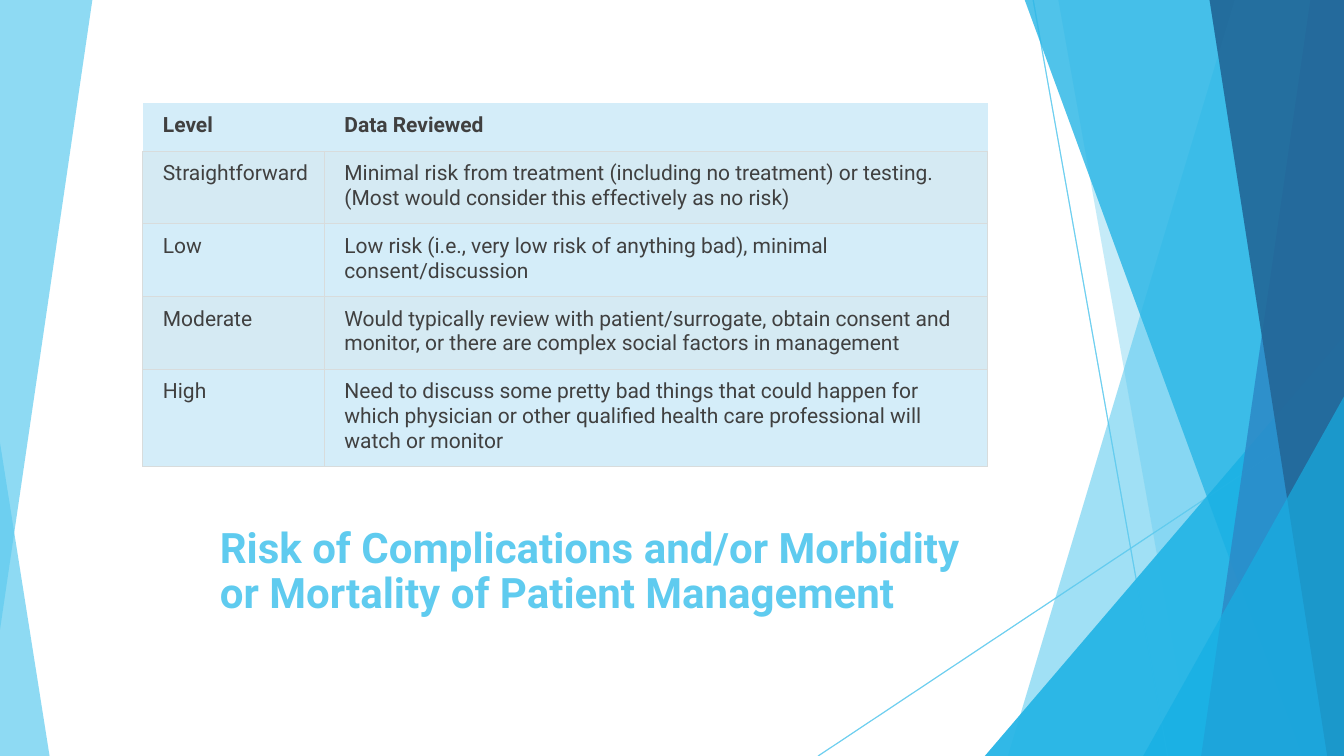
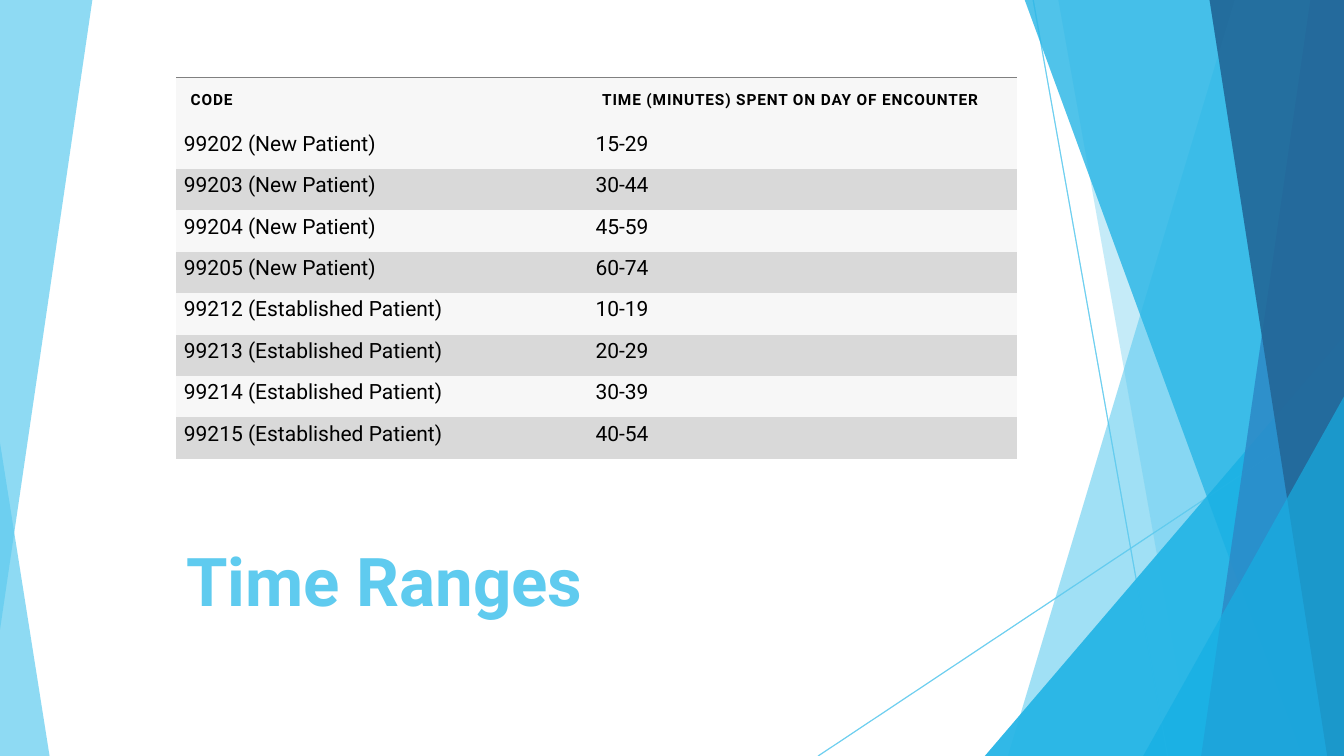
from dataclasses import dataclass

from pptx import Presentation
from pptx.dml.color import RGBColor
from pptx.enum.shapes import MSO_CONNECTOR as Connector, MSO_SHAPE as Preset
from pptx.enum.text import MSO_ANCHOR as Anchor
from pptx.oxml.ns import qn
from pptx.oxml.xmlchemy import OxmlElement
from pptx.util import Emu, Pt

COLUMNS, ROWS = 160, 90
UNIT = 76200
FONT = "Roboto"
SKY, CYAN, BLUE, NAVY = "5FCBEF", "17B0E4", "2E83C3", "226292"
INK, BLACK, RULE, GREY = "404040", "000000", "D8DCDC", "808080"
PALE, PALE_BAND, LIGHT, LIGHT_BAND = "D4EDF9", "D5EAF3", "F7F7F7", "D9D9D9"
SIDES = ("L", "R", "T", "B")


@dataclass(frozen=True)
class Ray:
    start: tuple[float, float]
    end: tuple[float, float]


@dataclass(frozen=True)
class Band:
    points: tuple[tuple[float, float], ...]
    color: str
    opacity: int


@dataclass(frozen=True)
class Wedge:
    left: float
    top: float
    width: float
    color: str
    opacity: int
    apex: int


@dataclass(frozen=True)
class Title:
    text: str
    left: float
    top: float
    size: int
    spacing: float


@dataclass(frozen=True)
class RowStyle:
    size: int
    color: str
    bold: bool
    insets: tuple[float, float, float, float]
    fills: tuple[str, ...]
    borders: str
    rule: str
    rule_width: float
    tracking: int = 0


@dataclass(frozen=True)
class Grid:
    left: float
    top: float
    widths: tuple[float, ...]
    heights: tuple[float, ...]
    header: RowStyle
    body: RowStyle
    rows: tuple[tuple[str, ...], ...]


def right_band(top: float, bottom: float, color: str, opacity: int) -> Band:
    corners = ((top, 0), (COLUMNS, 0), (COLUMNS, ROWS), (bottom, ROWS))
    return Band(corners, color, opacity)


RIGHT_ART = (
    Ray((123, 0), (139, ROWS)),
    Ray((COLUMNS, 48.4), (97.4, ROWS)),
    right_band(147.4, 120.5, SKY, 36),
    right_band(126, 142, SKY, 20),
    Wedge(117.25, 40, 42.75, CYAN, 66, 1),
    right_band(122.5, 154.9, CYAN, 50),
    right_band(156.4, 143, BLUE, 70),
    right_band(143.5, 158.1, NAVY, 80),
    Wedge(136.1, 47.2, 23.9, CYAN, 66, 1),
)
LEFT_ART = (
    Wedge(0, 52.7, 5.9, SKY, 70, 0),
    Band(((0, 0), (11.3, 0), (0, 74.6)), SKY, 70),
)
ARTWORK = RIGHT_ART + LEFT_ART + RIGHT_ART

RISK_INSETS = (2.4, 1.2, 1.2, 1.2)
RISK_TITLE = Title(
    "Risk of Complications and/or Morbidity\vor Mortality of Patient Management",
    25, 59.8, 30, 0.9)
RISK_GRID = Grid(
    17, 12.25, (21.6, 79), (5.75, 8.65, 8.65, 8.65, 11.6),
    RowStyle(15, INK, True, RISK_INSETS, (PALE,), "B", RULE, 0.75),
    RowStyle(15, INK, False, RISK_INSETS, (PALE_BAND, PALE), "LRTB", RULE, 0.75),
    (
        ("Level", "Data Reviewed"),
        ("Straightforward",
         "Minimal risk from treatment (including no treatment) or testing. "
         "(Most would consider this effectively as no risk)"),
        ("Low",
         "Low risk (i.e., very low risk of anything bad), minimal "
         "consent/discussion"),
        ("Moderate",
         "Would typically review with patient/surrogate, obtain consent and "
         "monitor, or there are complex social factors in management"),
        ("High",
         "Need to discuss some pretty bad things that could happen for which "
         "physician or other qualified health care professional will watch "
         "or monitor"),
    ))

TIME_TITLE = Title("Time Ranges", 21, 60, 48, 1.0)
TIME_GRID = Grid(
    21, 9.2, (49, 51.1), (6,) + (4.93,) * 8,
    RowStyle(11, BLACK, True, (1.7,) * 4, (LIGHT,), "T", GREY, 1, 60),
    RowStyle(15, BLACK, False, (0.9, 0.5, 0.9, 1.1), (LIGHT, LIGHT_BAND), "", GREY, 1),
    (
        ("CODE", "TIME (MINUTES) SPENT ON DAY OF ENCOUNTER"),
        ("99202 (New Patient)", "15-29"),
        ("99203 (New Patient)", "30-44"),
        ("99204 (New Patient)", "45-59"),
        ("99205 (New Patient)", "60-74"),
        ("99212 (Established Patient)", "10-19"),
        ("99213 (Established Patient)", "20-29"),
        ("99214 (Established Patient)", "30-39"),
        ("99215 (Established Patient)", "40-54"),
    ))


def units(count: float) -> Emu:
    return Emu(round(count * UNIT))


def rgb(color: str) -> RGBColor:
    return RGBColor.from_string(color)


def set_opacity(shape, percent: int) -> None:
    alpha = OxmlElement("a:alpha")
    alpha.set("val", str(percent * 1000))
    shape._element.spPr.find(".//" + qn("a:srgbClr")).append(alpha)


def paint(shape, color: str, opacity: int) -> None:
    shape.shadow.inherit = False
    shape.line.fill.background()
    shape.fill.solid()
    shape.fill.fore_color.rgb = rgb(color)
    set_opacity(shape, opacity)


def draw_ray(page, ray: Ray) -> None:
    ends = [units(value) for value in ray.start + ray.end]
    line = page.shapes.add_connector(Connector.STRAIGHT, *ends)
    line.line.color.rgb = rgb(SKY)
    line.line.width = Pt(0.75)
    set_opacity(line, 70)
    line._element.spPr.append(OxmlElement("a:effectLst"))


def draw_band(page, band: Band) -> None:
    first, *others = band.points
    outline = page.shapes.build_freeform(*first, scale=UNIT)
    outline.add_line_segments(others, close=True)
    paint(outline.convert_to_shape(), band.color, band.opacity)


def draw_wedge(page, wedge: Wedge) -> None:
    shape = page.shapes.add_shape(
        Preset.ISOSCELES_TRIANGLE, units(wedge.left), units(wedge.top),
        units(wedge.width), units(ROWS - wedge.top))
    shape.adjustments[0] = wedge.apex
    paint(shape, wedge.color, wedge.opacity)


DRAWERS = {Ray: draw_ray, Band: draw_band, Wedge: draw_wedge}


def format_spans(para, size: int, color: str, bold: bool, tracking: int = 0) -> None:
    for span in para.runs:
        span.font.name = FONT
        span.font.size = Pt(size)
        span.font.bold = bold
        span.font.color.rgb = rgb(color)
        if tracking:
            span._r.get_or_add_rPr().set("spc", str(tracking))


def draw_title(page, title: Title) -> None:
    box = page.shapes.add_textbox(
        units(title.left), units(title.top), units(121.7 - title.left), units(14.35))
    frame = box.text_frame
    frame.word_wrap = True
    frame.vertical_anchor = Anchor.BOTTOM
    para = frame.paragraphs[0]
    para.text = title.text
    para.line_spacing = title.spacing
    format_spans(para, title.size, SKY, True)


def set_borders(cell, style: RowStyle) -> None:
    properties = cell._tc.get_or_add_tcPr()
    for side in SIDES:
        edge = OxmlElement(f"a:ln{side}")
        edge.set("w", str(Pt(style.rule_width)))
        if side in style.borders:
            fill = OxmlElement("a:solidFill")
            tone = OxmlElement("a:srgbClr")
            tone.set("val", style.rule)
            fill.append(tone)
        else:
            fill = OxmlElement("a:noFill")
        edge.append(fill)
        properties.append(edge)


def fill_cell(cell, text: str, style: RowStyle, fill: str) -> None:
    set_borders(cell, style)
    cell.fill.solid()
    cell.fill.fore_color.rgb = rgb(fill)
    (cell.margin_left, cell.margin_top,
     cell.margin_right, cell.margin_bottom) = map(units, style.insets)
    cell.text_frame.text = text
    format_spans(cell.text_frame.paragraphs[0], style.size, style.color,
                 style.bold, style.tracking)


def draw_grid(page, grid: Grid) -> None:
    table = page.shapes.add_table(
        len(grid.heights), len(grid.widths), units(grid.left), units(grid.top),
        units(sum(grid.widths)), units(sum(grid.heights))).table
    table.horz_banding = False
    for column, width in zip(table.columns, grid.widths):
        column.width = units(width)
    for index, (row, height, texts) in enumerate(
            zip(table.rows, grid.heights, grid.rows)):
        row.height = units(height)
        style = grid.body if index else grid.header
        fill = style.fills[(index - 1) % len(style.fills)]
        for cell, text in zip(row.cells, texts):
            fill_cell(cell, text, style, fill)


def add_page(deck, title: Title, grid: Grid) -> None:
    page = deck.slides.add_slide(deck.slide_layouts[6])
    for item in ARTWORK:
        DRAWERS[type(item)](page, item)
    draw_title(page, title)
    draw_grid(page, grid)


def main() -> None:
    deck = Presentation()
    deck.slide_width, deck.slide_height = units(COLUMNS), units(ROWS)
    add_page(deck, RISK_TITLE, RISK_GRID)
    add_page(deck, TIME_TITLE, TIME_GRID)
    deck.save("out.pptx")


if __name__ == "__main__":
    main()
